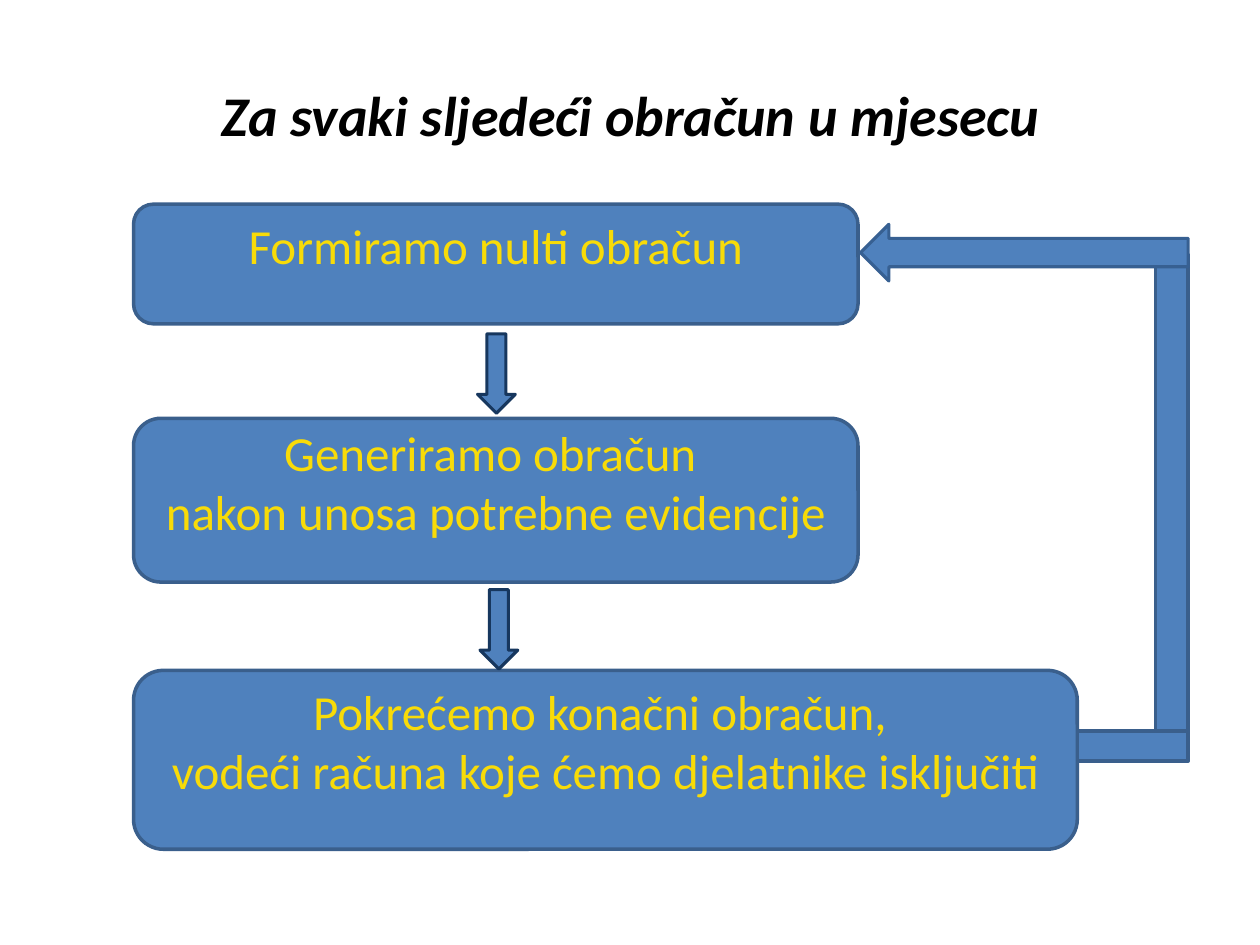
import pptx
import pptx.util
import pptx.dml.color
import pptx.enum.shapes
import pptx.enum.text

Inches = pptx.util.Inches
Pt = pptx.util.Pt
Shapes = pptx.enum.shapes.MSO_SHAPE

COLORS = {
    "title": "000000",
    "step_text": "F8DB08",
    "fill": "4F81BD",
    "outline": "3A5F8C",
    "down_outline": "17375E",
    "return_outline": "376092",
}


class FlowSlide:
    font = "Calibri"

    def __init__(self, slide):
        self.slide = slide

    def color(self, key):
        return pptx.dml.color.RGBColor.from_string(COLORS[key])

    def set_text(self, shape, lines, size, color, bold=False, italic=False):
        frame = shape.text_frame
        frame.word_wrap = True
        frame.vertical_anchor = pptx.enum.text.MSO_ANCHOR.MIDDLE
        frame.text = "\n".join(lines)
        for paragraph in frame.paragraphs:
            paragraph.alignment = pptx.enum.text.PP_ALIGN.CENTER
            for run in paragraph.runs:
                run.font.name = self.font
                run.font.size = Pt(size)
                run.font.bold = bold
                run.font.italic = italic
                run.font.color.rgb = self.color(color)

    def title(self, text, left, top, width, height):
        box = self.slide.shapes.add_textbox(
            Inches(left), Inches(top), Inches(width), Inches(height))
        self.set_text(box, [text], 32, "title", bold=True, italic=True)

    def block(self, kind, left, top, width, height, outline="outline", weight=2):
        shape = self.slide.shapes.add_shape(
            kind, Inches(left), Inches(top), Inches(width), Inches(height))
        shape.shadow.inherit = False
        shape.fill.solid()
        shape.fill.fore_color.rgb = self.color("fill")
        shape.line.color.rgb = self.color(outline)
        shape.line.width = Pt(weight)
        return shape

    def step(self, lines, top, width, height):
        box = self.block(Shapes.ROUNDED_RECTANGLE, 1.06, top, width, height)
        self.set_text(box, lines, 28, "step_text")
        box.text_frame.margin_bottom = Inches(0.35)

    def down_arrow(self, left, top):
        self.block(Shapes.DOWN_ARROW, left, top, 0.3, 0.63, "down_outline", 1.75)

    def return_path(self):
        self.block(Shapes.RECTANGLE, 8.55, 5.8, 0.88, 0.24)
        self.block(Shapes.RECTANGLE, 9.17, 2.02, 0.26, 3.78)
        self.block(Shapes.LEFT_ARROW, 6.83, 1.78, 2.6, 0.45, "return_outline", 1.75)


def main():
    deck = pptx.Presentation()
    deck.slide_width = Inches(10)
    deck.slide_height = Inches(7.5)
    flow = FlowSlide(deck.slides.add_slide(deck.slide_layouts[6]))

    flow.title("Za svaki sljedeći obračun u mjesecu", 0.51, 0.28, 9, 1.25)
    flow.step(["Formiramo nulti obračun"], 1.62, 5.75, 0.95)
    flow.step(["Generiramo obračun ", "nakon unosa potrebne evidencije"],
              3.32, 5.75, 1.3)
    flow.step(["Pokrećemo konačni obračun, ",
               "vodeći računa koje ćemo djelatnike isključiti"],
              5.32, 7.49, 1.42)
    flow.down_arrow(3.79, 2.65)
    flow.down_arrow(3.81, 4.68)
    flow.return_path()
    deck.save("out.pptx")


if __name__ == "__main__":
    main()
